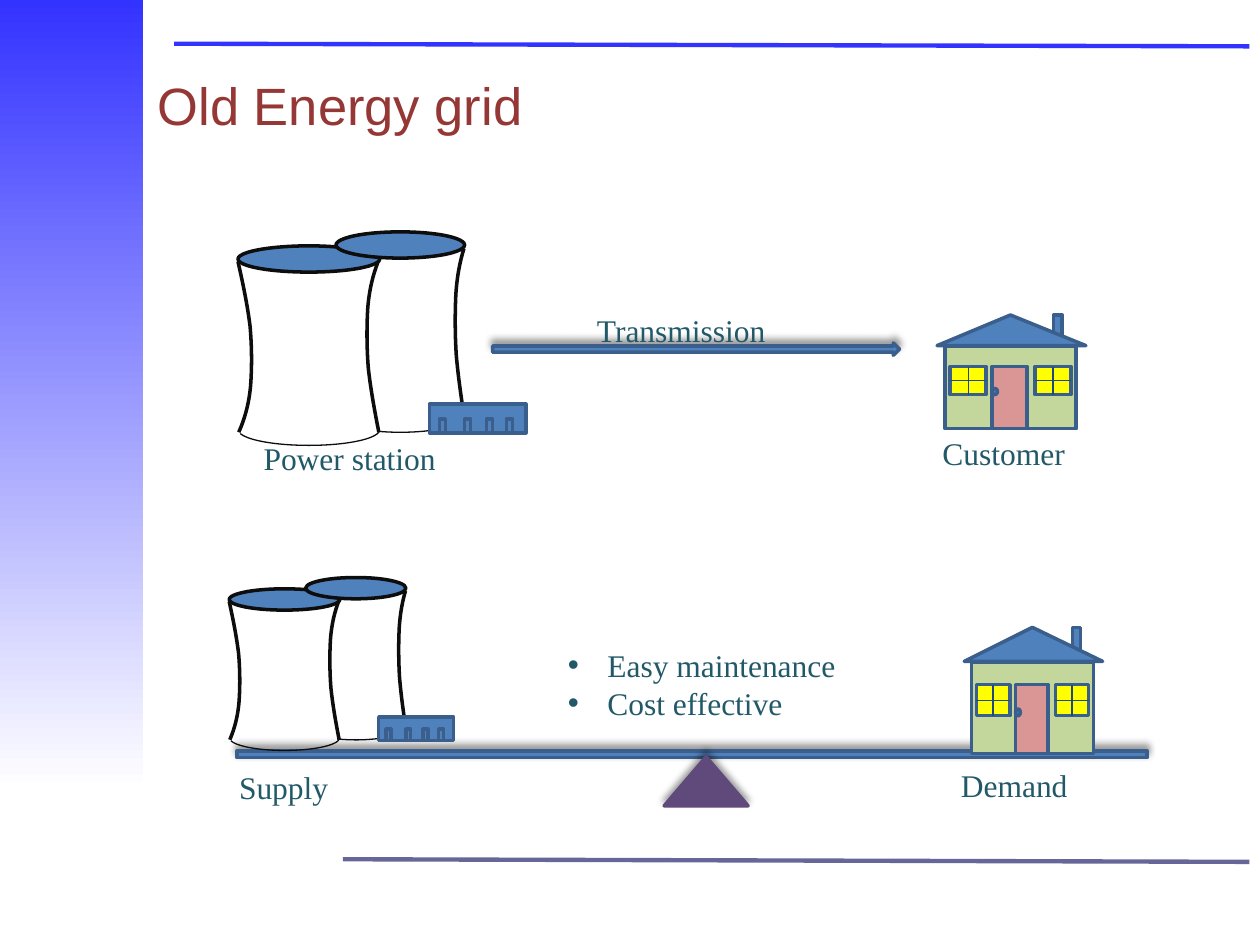
from lxml.etree import SubElement
from pptx import Presentation
from pptx.dml.color import RGBColor
from pptx.enum.shapes import MSO_CONNECTOR, MSO_SHAPE
from pptx.enum.text import MSO_ANCHOR, MSO_AUTO_SIZE, PP_ALIGN
from pptx.oxml.ns import qn
from pptx.util import Pt

BLUE, EDGE, INK, TEAL = "4F81BD", "3A5F8C", "0D0D0D", "215968"
# Bow of a tower wall: share of the depth, distance along the wall
BOW = [(0, 0), (.36, 12.5), (.68, 25), (.86, 36.5), (1, 48.5),
       (1, 61), (.9, 71.5), (.78, 81.5), (.48, 90), (.06, 97.5)]


def color(code):
    return RGBColor.from_string(code)


class Kit:
    """Style and current slide; lengths are in points."""

    body = {"size": Pt(18), "name": "Times New Roman"}
    head = {"size": Pt(30), "name": "Arial"}

    def __init__(self, slide):
        self.slide = slide
        self.frame()

    def frame(self, shapes=None, x=0, y=0, sx=1, sy=1):
        """Choose the shapes to add to, their origin and their scale."""
        self.shapes = shapes or self.slide.shapes
        self.x, self.y, self.sx, self.sy = x, y, sx, sy

    def group(self, x, y, sx, sy):
        item = self.slide.shapes.add_group_shape()
        self.frame(item.shapes, x, y, sx, sy)
        self.shapes = item.shapes

    def spot(self, x, y):
        return Pt(self.x + x * self.sx), Pt(self.y + y * self.sy)

    def box(self, x, y, w, h):
        return *self.spot(x, y), Pt(w * self.sx), Pt(h * self.sy)

    def paint(self, shape, fill, line, width):
        shape.shadow.inherit = False
        if fill:
            shape.fill.solid()
            shape.fill.fore_color.rgb = color(fill)
        else:
            shape.fill.background()
        shape.line.color.rgb = color(line)
        shape.line.width = Pt(width)

    def shape(self, kind, box, fill=BLUE, line=EDGE, width=2, adj=(), turn=0):
        item = self.shapes.add_shape(kind, *self.box(*box))
        self.paint(item, fill, line, width)
        item.rotation = turn
        for i, value in enumerate(adj):
            item.adjustments[i] = value
        return item

    def rect(self, *box, fill=BLUE):
        return self.shape(MSO_SHAPE.RECTANGLE, box, fill)

    def line(self, x1, y1, x2, y2, code, width):
        item = self.shapes.add_connector(
            MSO_CONNECTOR.STRAIGHT, *self.spot(x1, y1), *self.spot(x2, y2))
        item.line.color.rgb = color(code)
        item.line.width = Pt(width)
        SubElement(item._element.spPr, qn("a:effectLst"))

    def curve(self, dots):
        """Smooth open line: a start, then three points for each Bezier part."""
        first, *rest = [self.spot(*dot) for dot in dots]
        pen = self.shapes.build_freeform(*first)
        pen.add_line_segments(rest, close=False)
        item = pen.convert_to_shape()
        self.paint(item, None, INK, 2)
        track = item._element.find(".//" + qn("a:path"))
        legs = track.findall(qn("a:lnTo"))
        for i in range(0, len(legs), 3):
            part = SubElement(track, qn("a:cubicBezTo"))
            for leg in legs[i:i + 3]:
                part.append(leg[0])
                track.remove(leg)

    def shade(self, item):
        """Soft shadow above the shape."""
        glow = SubElement(item._element.spPr.find(qn("a:effectLst")),
                          qn("a:outerShdw"), blurRad=str(Pt(4)),
                          dist=str(Pt(3)), dir="16200000", rotWithShape="0")
        tint = SubElement(glow, qn("a:srgbClr"), val="000000")
        SubElement(tint, qn("a:alpha"), val="40000")

    def label(self, para, text, look, code):
        para.text = text
        for key, value in look.items():
            setattr(para.font, key, value)
        para.font.color.rgb = color(code)

    def title(self, text, box):
        item = self.slide.shapes.title
        item.left, item.top, item.width, item.height = self.box(*box)
        item.text_frame.vertical_anchor = MSO_ANCHOR.MIDDLE
        para = item.text_frame.paragraphs[0]
        para.alignment = PP_ALIGN.LEFT
        self.label(para, text, self.head, "953735")

    def text(self, lines, box, bullet=False):
        frame = self.shapes.add_textbox(*self.box(*box)).text_frame
        frame.word_wrap = True
        frame.auto_size = MSO_AUTO_SIZE.SHAPE_TO_FIT_TEXT
        for i, text in enumerate(lines):
            para = frame.add_paragraph() if i else frame.paragraphs[0]
            if bullet:
                props = para._p.get_or_add_pPr()
                props.set("marL", str(Pt(22.5)))
                props.set("indent", str(Pt(-22.5)))
                SubElement(props, qn("a:buFont"), typeface="Arial")
                SubElement(props, qn("a:buChar"), char="•")
            self.label(para, text, self.body, TEAL)

    def wall(self, x, y, deep, way):
        self.curve([(x + deep * a, y + way * b) for a, b in BOW])

    def base(self, box, end):
        self.shape(MSO_SHAPE.ARC, box, None, INK, .75, (108.585, end), 180)

    def station(self, x, y, sx=1, sy=1):
        self.group(x, y, sx, sy)
        # Front tower
        self.shape(MSO_SHAPE.OVAL, (0, 8, 81, 15), line=INK)
        self.wall(0, 17, 8, 1)
        self.wall(80.5, 114.5, -7, -1)
        self.base((0, 104, 81, 18), 214.025)
        # Back tower
        self.shape(MSO_SHAPE.OVAL, (56, 0, 73.5, 15), line=INK)
        self.base((56, 96.5, 73.5, 18), 196.092)
        self.wall(129.5, 107, -5.5, -1)
        # Hall with its doors
        self.rect(109.5, 98.5, 55, 16.5)
        for left in (115, 129.5, 142, 153.5):
            self.rect(left, 107, 3.5, 8)
        self.frame()

    def house(self, x, y, sx=1, sy=1):
        self.group(x, y, sx, sy)
        # Chimney, body and door
        self.rect(66.5, 0, 5, 15)
        self.shape(MSO_SHAPE.FLOWCHART_PROCESS, (4.5, 18, 75, 47), "C3D69B")
        self.rect(31.5, 29.5, 20, 35.5, fill="D99694")
        # Windows with crossed bars
        for left in (7.5, 56):
            self.rect(left, 29.5, 20.5, 16, fill="FFFF00")
            self.line(left + 10.25, 29.5, left + 10.25, 45.5, "1F497D", .75)
            self.line(left, 37.5, left + 20.5, 37.5, "1F497D", .75)
        # Roof and door knob
        self.shape(MSO_SHAPE.ISOSCELES_TRIANGLE, (0, 0, 85, 17.5), adj=(.493,))
        self.shape(MSO_SHAPE.OVAL, (31.5, 42, 3, 3.5))
        self.frame()


def main():
    deck = Presentation()
    deck.slide_width, deck.slide_height = Pt(720), Pt(540)
    kit = Kit(deck.slides.add_slide(deck.slide_layouts[5]))

    # Side band and rules
    band = kit.rect(0, 0, 82, 451.5)
    band.line.fill.background()
    band.fill.gradient()
    band.fill.gradient_angle = 270
    stops = zip(band.fill.gradient_stops, ("3333FF", "FFFFFF"), (0, 1))
    for stop, code, place in stops:
        stop.color.rgb = color(code)
        stop.position = place
    kit.line(99.5, 25, 714, 26.5, "3333FF", 2.5)
    kit.line(196, 491, 714, 492.5, "666699", 2.5)
    kit.title("Old Energy grid", (83, 31.5, 636, 57))

    # From power station to customer
    kit.shade(kit.shape(MSO_SHAPE.RIGHT_ARROW, (281.5, 196, 232.5, 7)))
    kit.station(136, 132.5)
    kit.house(535.5, 180)

    # Balance of supply and demand
    kit.shade(kit.rect(135.5, 429, 520, 4))
    kit.shade(kit.shape(MSO_SHAPE.ISOSCELES_TRIANGLE,
                        (379.5, 432.5, 48, 28), "604A7B", "604A7B"))
    kit.station(131, 330, .78, .81)
    kit.house(551, 358.5, .93, 1.11)

    # Labels
    for text, x, y, w in (("Power station", 143.5, 247.5, 129),
                          ("Customer", 531.5, 244.5, 152),
                          ("Transmission", 334, 174, 129),
                          ("Supply", 129.5, 435.5, 78.5),
                          ("Demand", 542, 434, 78.5)):
        kit.text([text], (x, y, w, 29))
    kit.text(["Easy maintenance", "Cost effective"],
             (317.5, 365.5, 171.5, 51), bullet=True)
    deck.save("out.pptx")


if __name__ == "__main__":
    main()
